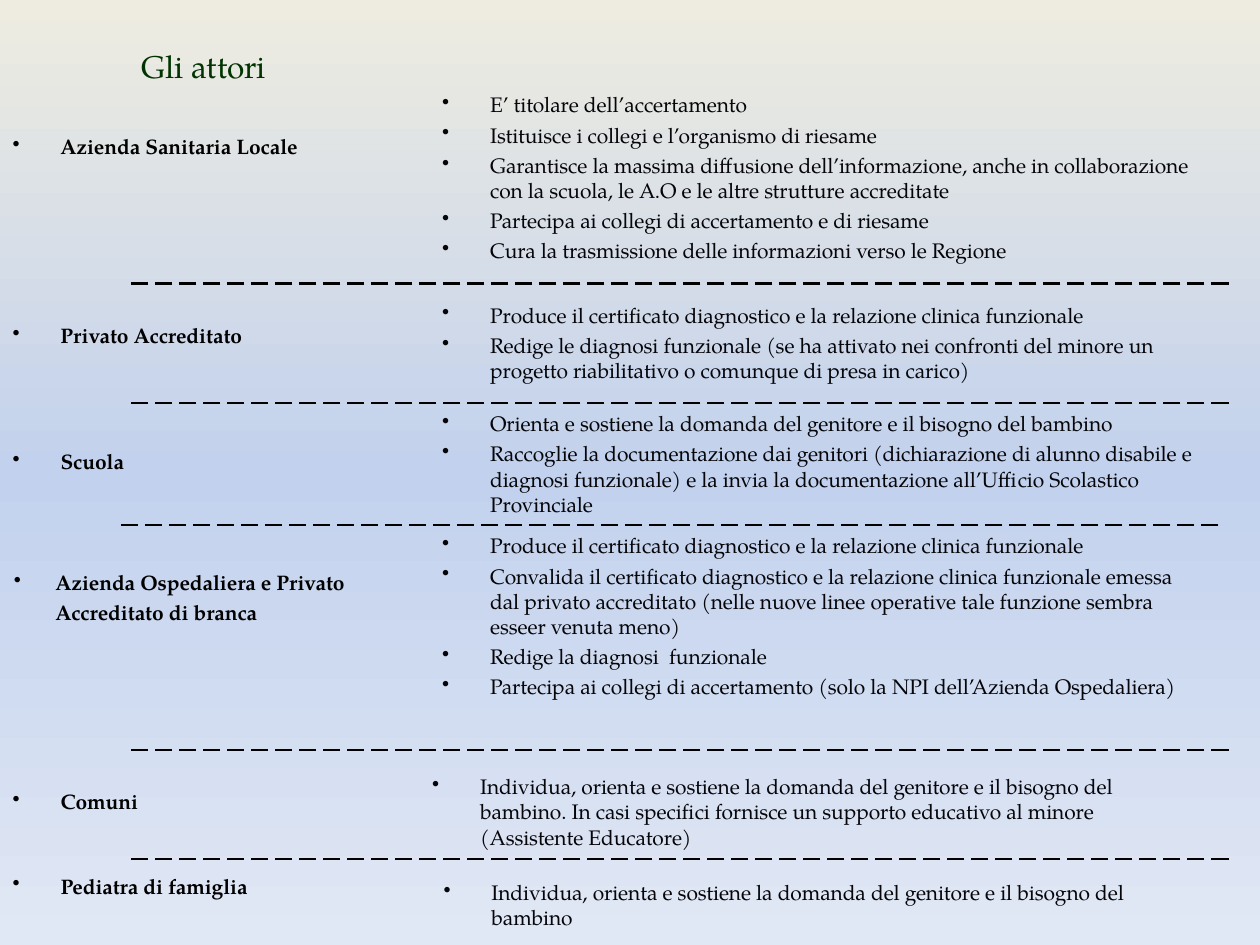
from copy import deepcopy
from dataclasses import dataclass

from lxml.etree import SubElement
from pptx import Presentation
from pptx.dml.color import RGBColor
from pptx.enum.dml import MSO_LINE
from pptx.enum.shapes import MSO_CONNECTOR
from pptx.oxml.ns import qn
from pptx.util import Inches, Pt


@dataclass(frozen=True)
class Theme:
    font: str = "TeX Gyre Pagella"
    title_color: str = "003300"
    label_color: str = "000000"
    duty_color: str = "06060A"
    rule_color: str = "000000"
    background: tuple = ((0, "EEECE1"), (0.5, "C2D1ED"), (1, "E1E8F5"))
    title_size: int = 18
    body_size: int = 12
    paragraph_gap: float = 2.85
    tracking: int = -7  # hundredths of a point
    indent: float = 0.39
    hanging: float = 0.38


THEME = Theme()


@dataclass(frozen=True)
class Actor:
    name: str
    label_box: tuple  # left, top, width, height in inches
    duties_box: tuple
    duties: tuple
    rule: tuple = ()  # left, top in inches
    label_indent: float = THEME.indent
    label_hanging: float = THEME.hanging
    label_spacing: float = 1.0


RULE_WIDTH = 8.75
NEED = "Individua, orienta e sostiene la domanda del genitore e il bisogno del bambino"
CERTIFICATE = "Produce il certificato diagnostico e la relazione clinica funzionale"

ACTORS = (
    Actor("Azienda Sanitaria Locale", (0.09, 1.06, 2.3, 0.19), (3.5, 0.73, 6.03, 1.35), (
        "E’ titolare dell’accertamento",
        "Istituisce i collegi e l’organismo di riesame",
        "Garantisce la massima diffusione dell’informazione, anche in collaborazione "
        "con la scuola, le A.O e le altre strutture accreditate",
        "Partecipa ai collegi di accertamento e di riesame",
        "Cura la trasmissione delle informazioni verso le Regione",
    ), (1, 2.25)),
    Actor("Privato Accreditato", (0.09, 2.56, 1.86, 0.19), (3.5, 2.4, 5.73, 0.63), (
        CERTIFICATE,
        "Redige le diagnosi funzionale (se ha attivato nei confronti del minore un "
        "progetto riabilitativo o comunque di presa in carico)",
    ), (1, 3.2)),
    Actor("Scuola", (0.09, 3.56, 0.91, 0.19), (3.5, 3.26, 6.04, 0.83), (
        "Orienta e sostiene la domanda del genitore e il bisogno del bambino",
        "Raccoglie la documentazione dai genitori (dichiarazione di alunno disabile e "
        "diagnosi funzionale) e la invia la documentazione all’Ufficio Scolastico Provinciale",
    ), (0.92, 4.17)),
    Actor("Azienda Ospedaliera e Privato Accreditato di branca",
          (0.09, 4.48, 2.73, 0.43), (3.5, 4.23, 5.9, 1.31), (
        CERTIFICATE,
        "Convalida il certificato diagnostico e la relazione clinica funzionale emessa "
        "dal privato accreditato (nelle nuove linee operative tale funzione sembra "
        "esseer venuta meno)",
        "Redige la diagnosi  funzionale",
        "Partecipa ai collegi di accertamento (solo la NPI dell’Azienda Ospedaliera)",
    ), (1, 5.95), label_indent=0.35, label_hanging=0.33, label_spacing=1.2),
    Actor("Comuni", (0.09, 6.26, 1.02, 0.19), (3.42, 6.14, 5.49, 0.59), (
        NEED + ". In casi specifici fornisce un supporto educativo al minore "
        "(Assistente Educatore)",
    ), (1, 6.82)),
    Actor("Pediatra di famiglia", (0.09, 6.93, 1.91, 0.19), (3.51, 6.98, 5.49, 0.39), (NEED,)),
)


def paint_background(slide):
    fill = slide.background.fill
    fill.gradient()
    fill.gradient_angle = 270
    first_stop = fill._fill._gradFill.gsLst[0]
    first_stop.addnext(deepcopy(first_stop))
    for stop, (position, color) in zip(fill.gradient_stops, THEME.background):
        stop.position = position
        stop.color.rgb = RGBColor.from_string(color)


def add_text(slide, box, lines):
    text_frame = slide.shapes.add_textbox(*map(Inches, box)).text_frame
    text_frame.word_wrap = True
    text_frame.margin_left = text_frame.margin_right = 0
    text_frame.margin_top = text_frame.margin_bottom = 0
    text_frame.text = "\n".join(lines)
    return text_frame


def set_bullet(paragraph, indent, hanging):
    properties = paragraph._p.get_or_add_pPr()
    properties.set("marL", str(Inches(indent)))
    properties.set("indent", str(-Inches(hanging)))
    SubElement(properties, qn("a:buChar"), char="•")
    tabs = SubElement(properties, qn("a:tabLst"))
    SubElement(tabs, qn("a:tab"), pos=str(Inches(THEME.indent)), algn="l")


def style_runs(paragraph, size, color, bold=False, tracking=0):
    for run in paragraph.runs:
        run.font.name = THEME.font
        run.font.size = Pt(size)
        run.font.bold = bold
        run.font.color.rgb = RGBColor.from_string(color)
        run._r.get_or_add_rPr().set("spc", str(tracking))


def add_title(slide, box, title):
    paragraph = add_text(slide, box, [title]).paragraphs[0]
    style_runs(paragraph, THEME.title_size, THEME.title_color)


def add_label(slide, actor):
    paragraph = add_text(slide, actor.label_box, [actor.name]).paragraphs[0]
    paragraph.line_spacing = actor.label_spacing
    set_bullet(paragraph, actor.label_indent, actor.label_hanging)
    style_runs(paragraph, THEME.body_size, THEME.label_color, True, THEME.tracking)


def add_duties(slide, actor):
    text_frame = add_text(slide, actor.duties_box, actor.duties)
    for index, paragraph in enumerate(text_frame.paragraphs):
        if index:
            paragraph.space_before = Pt(THEME.paragraph_gap)
        set_bullet(paragraph, THEME.indent, THEME.hanging)
        style_runs(paragraph, THEME.body_size, THEME.duty_color, tracking=THEME.tracking)


def add_rule(slide, left, top):
    rule = slide.shapes.add_connector(
        MSO_CONNECTOR.STRAIGHT,
        Inches(left + RULE_WIDTH), Inches(top), Inches(left), Inches(top))
    rule.line.color.rgb = RGBColor.from_string(THEME.rule_color)
    rule.line.width = Pt(1.25)
    rule.line.dash_style = MSO_LINE.LONG_DASH
    SubElement(rule._element.spPr, qn("a:effectLst"))


def main():
    presentation = Presentation()
    presentation.slide_width = Inches(10)
    presentation.slide_height = Inches(7.5)
    slide = presentation.slides.add_slide(presentation.slide_layouts[6])

    paint_background(slide)
    add_title(slide, (1.12, 0.37, 1.03, 0.28), "Gli attori")

    # One row per actor, closed by a dashed rule
    for actor in ACTORS:
        add_label(slide, actor)
        add_duties(slide, actor)
        if actor.rule:
            add_rule(slide, *actor.rule)

    presentation.save("out.pptx")


if __name__ == "__main__":
    main()
